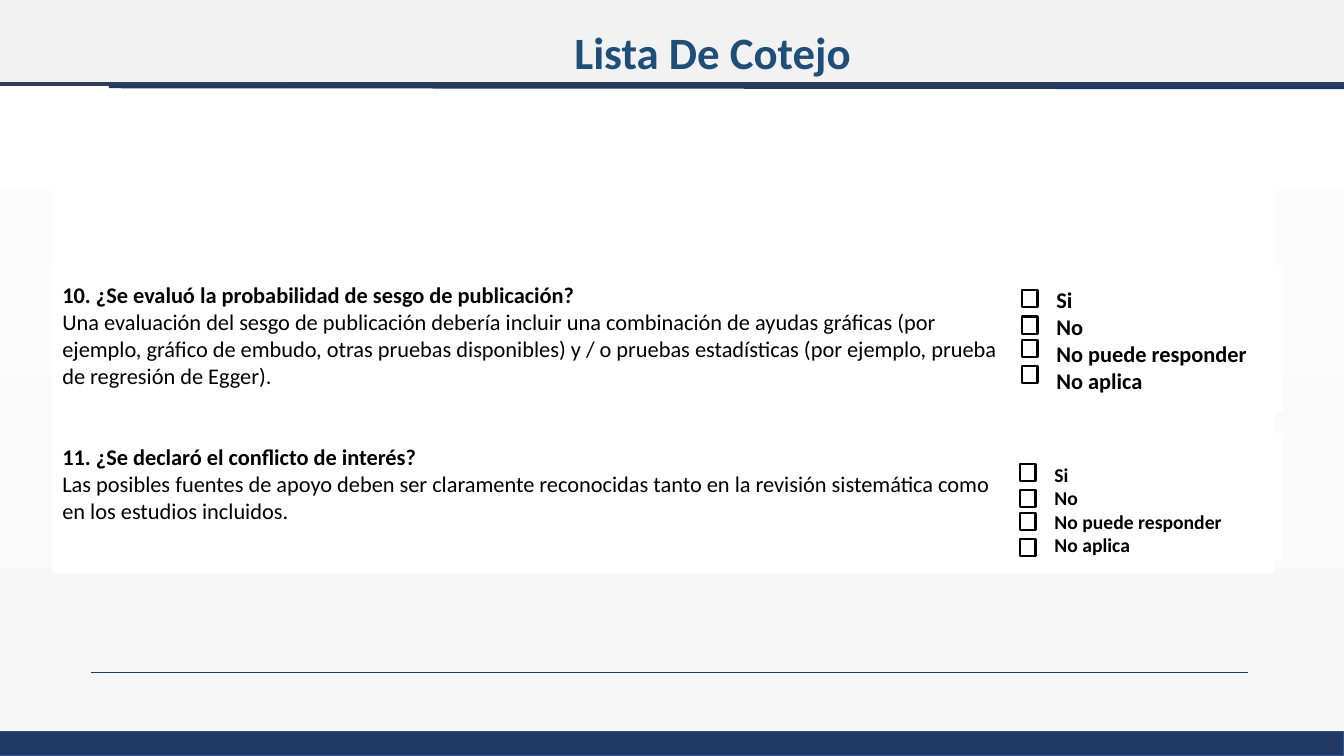
import pptx
import pptx.util
import pptx.dml.color
import pptx.enum.shapes
import pptx.enum.text
import pptx.oxml.xmlchemy

Inches = pptx.util.Inches
Pt = pptx.util.Pt
RGBColor = pptx.dml.color.RGBColor

WHITE = RGBColor(0xFF, 0xFF, 0xFF)
PALE_GREY = RGBColor(0xF7, 0xF7, 0xF7)
HEADER_GREY = RGBColor(0xF2, 0xF2, 0xF2)
SLATE = RGBColor(0x2D, 0x3D, 0x55)
NAVY = RGBColor(0x20, 0x38, 0x64)
BAR_EDGE = RGBColor(0x32, 0x54, 0x91)
TITLE_BLUE = RGBColor(0x1F, 0x4E, 0x79)
BLACK = RGBColor(0, 0, 0)

deck = pptx.Presentation()
deck.slide_width, deck.slide_height = Inches(13.33), Inches(7.5)
page = deck.slides.add_slide(deck.slide_layouts[6])

backdrop = page.background.fill
backdrop.gradient()
backdrop.gradient_angle = 270
for stop, colour in zip(backdrop.gradient_stops, (WHITE, PALE_GREY)):
    stop.color.rgb = colour


def add_box(place, fill=None, edge=None, weight=1.0):
    """Add a flat rectangle; without a colour the fill or edge stays empty."""
    box = page.shapes.add_shape(
        pptx.enum.shapes.MSO_SHAPE.RECTANGLE, *map(Inches, place))
    box.shadow.inherit = False
    for paint, colour in ((box.fill, fill), (box.line.fill, edge)):
        if colour is None:
            paint.background()
        else:
            paint.solid()
            paint.fore_color.rgb = colour
    if edge is not None:
        box.line.width = Pt(weight)


def add_text(place, lines, size, colour=BLACK, align=None):
    """Add a text box from (text, bold, points before) lines."""
    box = page.shapes.add_textbox(*map(Inches, place))
    box.text_frame.word_wrap = True
    for index, (text, bold, gap) in enumerate(lines):
        para = box.text_frame.paragraphs[0] if index == 0 else box.text_frame.add_paragraph()
        para.alignment = align
        if gap:
            para.space_before = Pt(gap)
        span = para.add_run()
        span.text = text
        span.font.color.rgb = colour
        for name, value in {"name": "Calibri", "size": Pt(size), "bold": bold}.items():
            setattr(span.font, name, value)


# Header band, white panels and footer bar
add_box((0, 0, 13.33, 0.83), HEADER_GREY)
for panel in ((0.52, 1.69, 12.13, 4), (0.52, 2.65, 12.21, 1.44), (0.52, 4.3, 12.21, 1.26)):
    add_box(panel, WHITE)
add_box((-0.13, 7.26, 13.46, 0.24), NAVY, BAR_EDGE)

# Rules
rules = [
    (0, 0.83, 13.33, 0.83, SLATE, 3),
    (0.9, 6.67, 12.38, 6.67, NAVY, 0.5),
    (1.08, 0.86, 13.33, 0.87, NAVY, 2.25),
]
for *ends, colour, weight in rules:
    rule = page.shapes.add_connector(
        pptx.enum.shapes.MSO_CONNECTOR.STRAIGHT, *map(Inches, ends))
    rule.line.color.rgb = colour
    rule.line.width = Pt(weight)
    rule._element.spPr.append(pptx.oxml.xmlchemy.OxmlElement("a:effectLst"))

# Questions
questions = [
    ("10. ¿Se evaluó la probabilidad de sesgo de publicación?", True, 0),
    ("Una evaluación del sesgo de publicación debería incluir una combinación de ayudas "
     "gráficas (por ejemplo, gráfico de embudo, otras pruebas disponibles) y / o pruebas "
     "estadísticas (por ejemplo, prueba de regresión de Egger).", False, 0),
    ("11. ¿Se declaró el conflicto de interés?", True, 39),
    ("Las posibles fuentes de apoyo deben ser claramente reconocidas tanto en la revisión "
     "sistemática como en los estudios incluidos.", False, 0),
]
add_text((0.52, 2.74, 9.61, 2.52), questions, 16)

# Answer lists: label place, text size, left and top of the first checkbox
answers = [(text, True, 0) for text in ("Si", "No", "No puede responder", "No aplica")]
answer_lists = [
    ((10.38, 2.79, 2.27, 1.18), 16, 10.14, 2.88),
    ((10.36, 4.54, 2.27, 1.04), 14, 10.12, 4.6),
]
for place, size, left, top in answer_lists:
    add_text(place, answers, size)
    for offset in (0, 0.26, 0.49, 0.75):
        add_box((left, top + offset, 0.15, 0.17), edge=BLACK, weight=1.5)

add_text((1.2, 0.2, 11.84, 0.64), [("Lista De Cotejo ", True, 0)], 32,
         TITLE_BLUE, pptx.enum.text.PP_ALIGN.CENTER)

deck.save("out.pptx")
